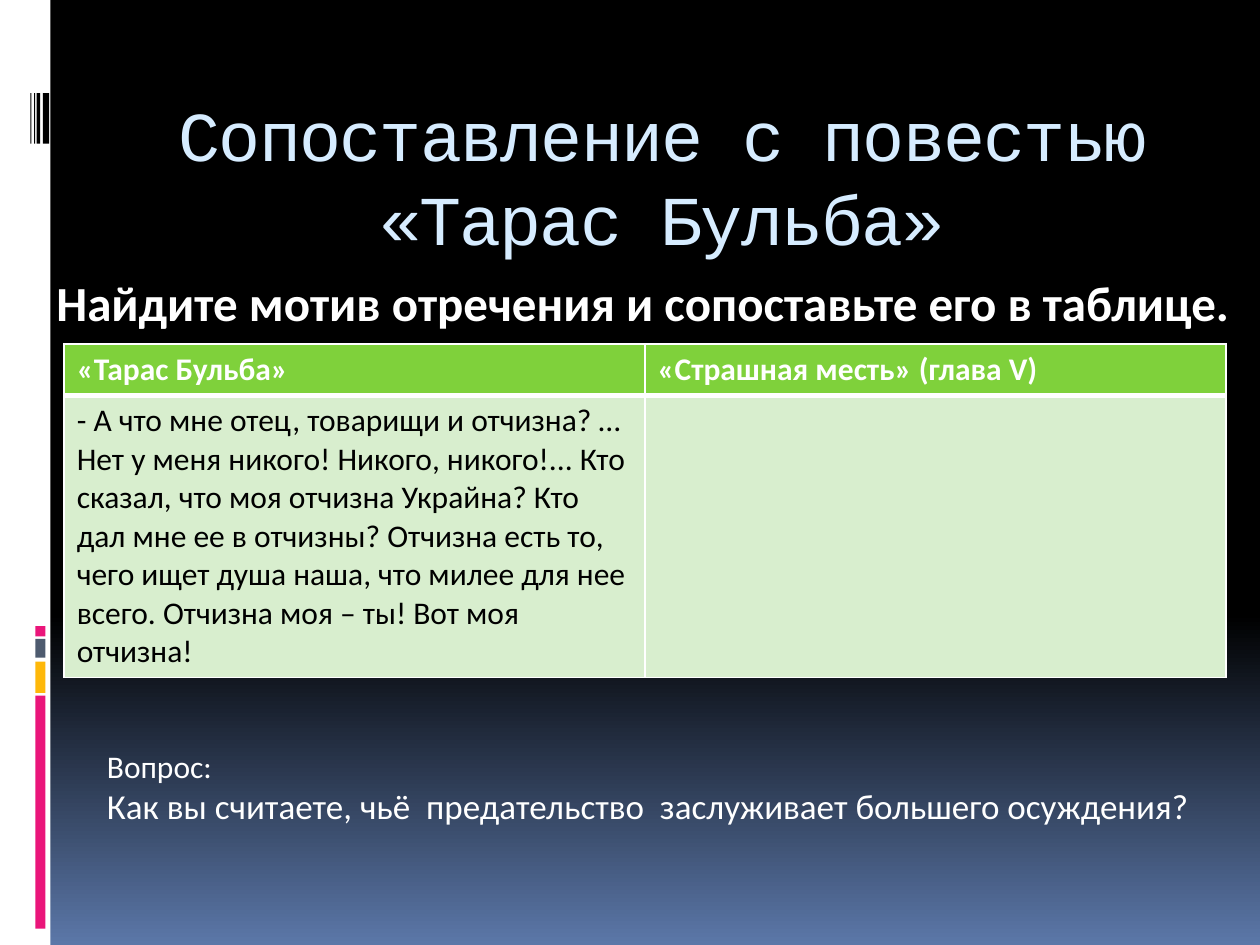
import dataclasses

import lxml.etree
import pptx
import pptx.dml.color
import pptx.enum.shapes
import pptx.enum.text
import pptx.oxml.ns
import pptx.util

Inches = pptx.util.Inches
Pt = pptx.util.Pt


@dataclasses.dataclass(frozen=True)
class Theme:
    black: str = "000000"
    white: str = "FFFFFF"
    glow: str = "5B77A8"
    title: str = "D6ECFF"
    pink: str = "EA157A"
    amber: str = "FEB80A"
    slate: str = "4E5B6F"
    header: str = "7FD13B"
    cell: str = "D8EECE"
    title_font: str = "Courier New"
    body_font: str = "Calibri"
    title_size: int = 40
    task_size: int = 28
    question_size: int = 20
    text_size: int = 18


THEME = Theme()


def rgb(value):
    return pptx.dml.color.RGBColor.from_string(value)


def set_font(font, size, color, name=THEME.body_font, bold=False):
    font.name, font.size, font.bold = name, Pt(size), bold
    font.color.rgb = rgb(color)


def set_background(s):
    fill = s.background.fill
    fill.gradient()
    fill.gradient_angle = 270
    stops = ((0.65, THEME.black), (1, THEME.glow))
    for stop, (position, color) in zip(fill.gradient_stops, stops):
        stop.position = position
        stop.color.rgb = rgb(color)


def add_block(s, left, top, width, height, color):
    sp = s.shapes.add_shape(
        pptx.enum.shapes.MSO_SHAPE.RECTANGLE,
        Inches(left), Inches(top), Inches(width), Inches(height))
    sp.shadow.inherit = False
    sp.fill.solid()
    sp.fill.fore_color.rgb = rgb(color)
    sp.line.fill.background()


def add_side_strip(s):
    add_block(s, 0, 0, 0.4, 7.5, THEME.white)
    for top, height, color in ((5.52, 1.85, THEME.pink), (5.25, 0.25, THEME.amber),
                               (5.07, 0.15, THEME.slate), (4.97, 0.08, THEME.pink)):
        add_block(s, 0.28, top, 0.08, height, color)
    for left, width in ((0.34, 0.05), (0.29, 0.03), (0.27, 0.01), (0.24, 0.01)):
        add_block(s, left, 0.74, width, 0.4, THEME.black)


def set_title(s, text):
    sp = s.shapes.title
    sp.left, sp.top, sp.width, sp.height = map(Inches, (1, 0.56, 8.5, 1))
    tf = sp.text_frame
    tf.text = text
    tf.auto_size = pptx.enum.text.MSO_AUTO_SIZE.NONE
    tf.vertical_anchor = pptx.enum.text.MSO_ANCHOR.TOP
    tf.margin_top = Inches(0.17)
    p = tf.paragraphs[0]
    p.alignment = pptx.enum.text.PP_ALIGN.CENTER
    set_font(p.font, THEME.title_size, THEME.title, THEME.title_font)
    p.runs[0].font._element.set("spc", "-100")


def add_text(s, left, top, width, height, lines, bold=False):
    tf = s.shapes.add_textbox(*map(Inches, (left, top, width, height))).text_frame
    tf.word_wrap = False
    tf.auto_size = pptx.enum.text.MSO_AUTO_SIZE.SHAPE_TO_FIT_TEXT
    tf.text = "\n".join(text for text, size in lines)
    for p, (text, size) in zip(tf.paragraphs, lines):
        set_font(p.font, size, THEME.white, bold=bold)


def set_borders(cell, widths):
    tc_pr = cell._tc.get_or_add_tcPr()
    qn = pptx.oxml.ns.qn
    for i, (side, width) in enumerate(zip("LRTB", widths)):
        ln = lxml.etree.Element(qn(f"a:ln{side}"), w=str(Pt(width)))
        fill = lxml.etree.SubElement(ln, qn("a:solidFill"))
        lxml.etree.SubElement(fill, qn("a:srgbClr"), val=THEME.white)
        tc_pr.insert(i, ln)


def add_comparison(s, rows):
    heights = (0.41, 2.23)
    frame = s.shapes.add_table(
        len(rows), 2, Inches(0.51), Inches(2.73), Inches(9.22), Inches(sum(heights)))
    table = frame.table
    styles = ((THEME.header, THEME.white, True, (1, 1, 1, 3)),
              (THEME.cell, THEME.black, False, (1, 1, 3, 1)))
    for row, texts, height, style in zip(table.rows, rows, heights, styles):
        row.height = Inches(height)
        fill, color, bold, borders = style
        for cell, text in zip(row.cells, texts):
            cell.text = text
            cell.fill.solid()
            cell.fill.fore_color.rgb = rgb(fill)
            set_borders(cell, borders)
            set_font(cell.text_frame.paragraphs[0].font, THEME.text_size, color, bold=bold)


def main():
    prs = pptx.Presentation()
    prs.slide_width, prs.slide_height = Inches(10), Inches(7.5)
    s = prs.slides.add_slide(prs.slide_layouts.get_by_name("Title Only"))
    set_background(s)
    add_side_strip(s)
    set_title(s, "Сопоставление с повестью «Тарас Бульба»")
    add_comparison(s, (
        ("«Тарас Бульба»", "«Страшная месть» (глава V)"),
        ("- А что мне отец, товарищи и отчизна? … Нет у меня никого! Никого, никого!... "
         "Кто сказал, что моя отчизна Украйна? Кто дал мне ее в отчизны? Отчизна есть то, "
         "чего ищет душа наша, что милее для нее всего. Отчизна моя – ты! Вот моя отчизна!",
         ""),
    ))
    add_text(s, 0.35, 2.11, 9.84, 0.57, (
        ("Найдите мотив отречения и сопоставьте его в таблице.", THEME.task_size),
    ), bold=True)
    add_text(s, 0.75, 5.88, 8.99, 0.74, (
        ("Вопрос:", THEME.text_size),
        ("Как вы считаете, чьё  предательство  заслуживает большего осуждения?",
         THEME.question_size),
    ))
    prs.save("out.pptx")


if __name__ == "__main__":
    main()
